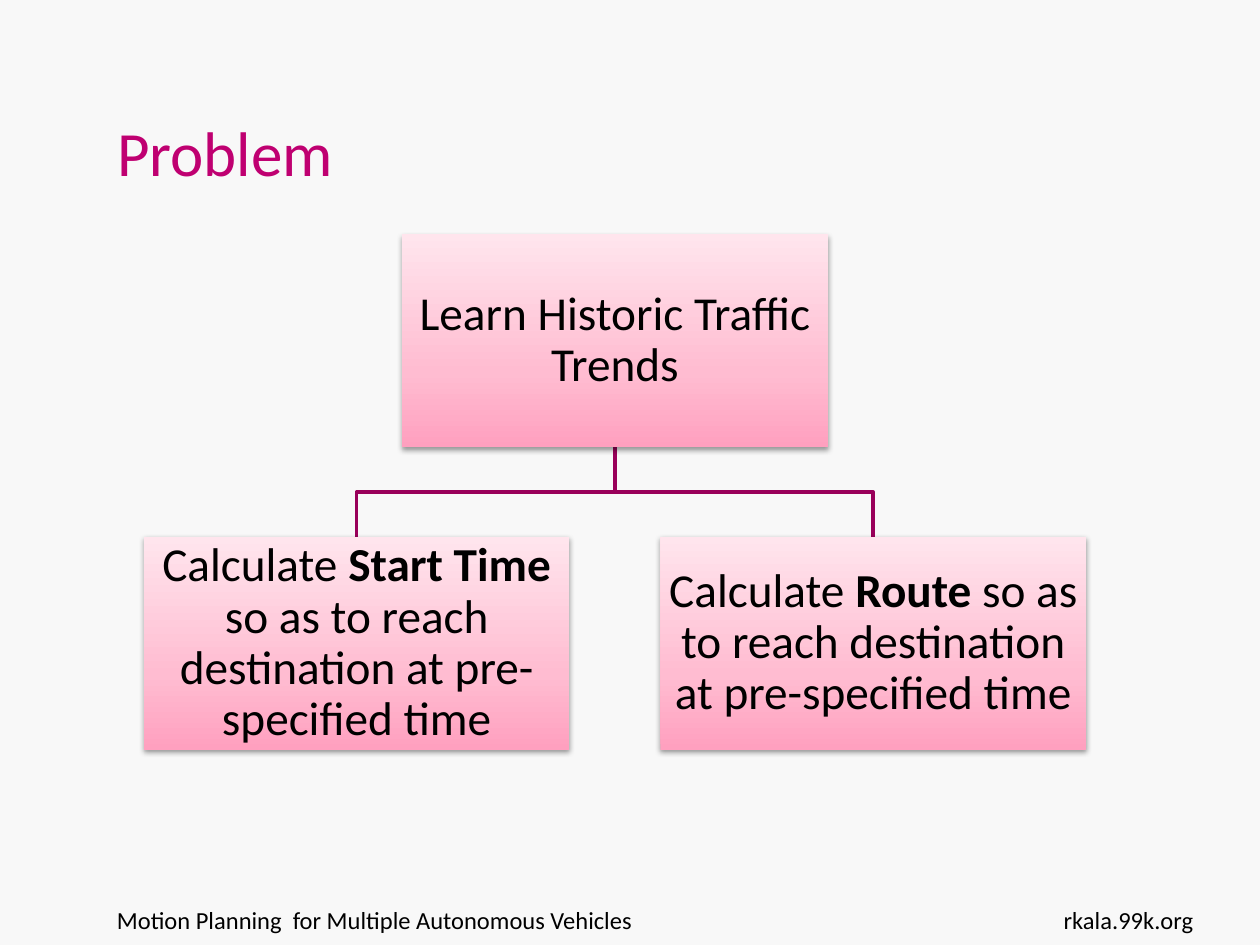
"""Build the Problem slide: one learning task that leads to two calculations."""
from lxml import etree
from copy import deepcopy
from pptx import Presentation
from pptx.dml.color import RGBColor
from pptx.enum.shapes import MSO_SHAPE
from pptx.enum.text import MSO_ANCHOR, PP_ALIGN
from pptx.oxml import parse_xml
from pptx.util import Inches, Pt

BACKGROUND = RGBColor(0xF8, 0xF8, 0xF8)
MAGENTA = RGBColor(0xBF, 0x00, 0x71)
PLUM = RGBColor(0x99, 0x00, 0x5A)
BLACK = RGBColor(0x00, 0x00, 0x00)
PINKS = [
    (0, RGBColor(0xFF, 0xA0, 0xBF)),
    (0.35, RGBColor(0xFF, 0xBC, 0xD1)),
    (1, RGBColor(0xFF, 0xE5, 0xED)),
]
FONT = "Calibri"
SHADOW = (
    '<a:effectLst xmlns:a="http://schemas.openxmlformats.org/drawingml/2006/main">'
    '<a:outerShdw blurRad="40000" dist="20000" dir="5400000" rotWithShape="0">'
    '<a:srgbClr val="000000"><a:alpha val="38000"/></a:srgbClr>'
    "</a:outerShdw></a:effectLst>"
)

BOX_WIDTH, BOX_HEIGHT = 3.38, 1.69
CENTER, SPREAD = 4.88, 2.05
ROOT_TOP, BRANCH_TOP = 1.86, 4.26
ROOT_BOTTOM = ROOT_TOP + BOX_HEIGHT
ELBOW = (ROOT_BOTTOM + BRANCH_TOP) / 2
GOAL = "so as to reach destination at pre-specified time"


def style_font(paragraph, size, color):
    paragraph.font.name = FONT
    paragraph.font.size = Pt(size)
    paragraph.font.color.rgb = color


prs = Presentation()
prs.slide_width, prs.slide_height = Inches(10), Inches(7.5)
slide = prs.slides.add_slide(prs.slide_layouts[5])
slide.background.fill.solid()
slide.background.fill.fore_color.rgb = BACKGROUND

title = slide.shapes.title
title.left, title.top = Inches(0.83), Inches(0.3)
title.width, title.height = Inches(6.77), Inches(1.25)
title.text_frame.text = "Problem"
title.text_frame.vertical_anchor = MSO_ANCHOR.BOTTOM
title.text_frame.paragraphs[0].alignment = PP_ALIGN.LEFT
style_font(title.text_frame.paragraphs[0], 36, MAGENTA)

for words, left, width, alignment in [
    ("Motion Planning  for Multiple Autonomous Vehicles", 0.83, 6.93, PP_ALIGN.LEFT),
    ("rkala.99k.org", 8.07, 1.5, PP_ALIGN.RIGHT),
]:
    footer = slide.shapes.add_textbox(Inches(left), Inches(7.13), Inches(width), Inches(0.52))
    footer.text_frame.word_wrap = True
    footer.text_frame.text = words
    footer.text_frame.paragraphs[0].alignment = alignment
    style_font(footer.text_frame.paragraphs[0], 14, BLACK)

for branch_center in (CENTER + SPREAD, CENTER - SPREAD):
    route = [(CENTER, ELBOW), (branch_center, ELBOW), (branch_center, BRANCH_TOP)]
    builder = slide.shapes.build_freeform(Inches(CENTER), Inches(ROOT_BOTTOM))
    builder.add_line_segments([(Inches(x), Inches(y)) for x, y in route], close=False)
    branch = builder.convert_to_shape()
    branch.shadow.inherit = False
    branch.fill.background()
    branch.line.color.rgb = PLUM
    branch.line.width = Pt(2)

for center, top, runs in [
    (CENTER, ROOT_TOP, [("Learn Historic Traffic Trends", False)]),
    (CENTER - SPREAD, BRANCH_TOP, [("Calculate ", False), ("Start Time ", True), (GOAL, False)]),
    (CENTER + SPREAD, BRANCH_TOP, [("Calculate ", False), ("Route ", True), (GOAL, False)]),
]:
    task = slide.shapes.add_shape(
        MSO_SHAPE.RECTANGLE, Inches(center - BOX_WIDTH / 2), Inches(top),
        Inches(BOX_WIDTH), Inches(BOX_HEIGHT))
    task.line.fill.background()
    task.fill.gradient()
    task.fill.gradient_angle = 90
    stops = task.element.spPr.find(".//{*}gsLst")
    stops.append(deepcopy(stops[-1]))
    for stop, (position, pink) in zip(task.fill.gradient_stops, PINKS):
        stop.position = position
        stop.color.rgb = pink
    task.element.spPr.append(parse_xml(SHADOW))

    frame = task.text_frame
    frame.word_wrap = True
    frame.vertical_anchor = MSO_ANCHOR.MIDDLE
    frame.margin_left = frame.margin_right = Inches(0.02)
    frame.margin_top = frame.margin_bottom = Inches(0.02)
    paragraph = frame.paragraphs[0]
    paragraph.alignment = PP_ALIGN.CENTER
    paragraph.line_spacing = 0.9
    style_font(paragraph, 27, BLACK)
    for words, bold in runs:
        run = paragraph.add_run()
        run.text = words
        run.font.bold = bold

prs.save("out.pptx")
